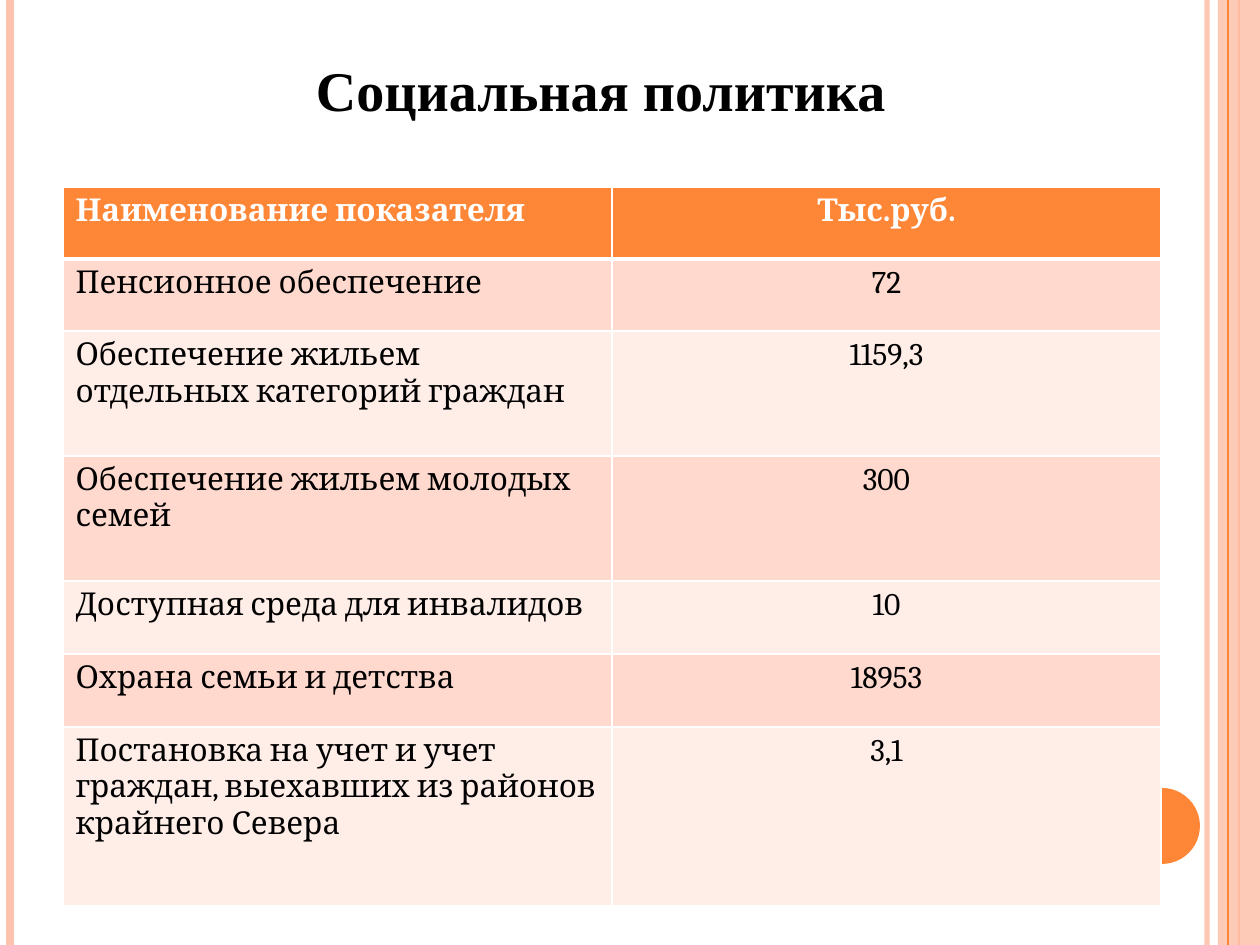
"""Build the social policy spending slide with its side stripes and table."""
from lxml.etree import SubElement
from pptx import Presentation
from pptx.dml.color import RGBColor
from pptx.enum.shapes import MSO_CONNECTOR, MSO_SHAPE
from pptx.enum.text import MSO_ANCHOR, PP_ALIGN
from pptx.oxml.ns import qn
from pptx.util import Emu, Pt

SCALE = 914400 / 126
WIDTH, HEIGHT = 1260, 945
ORANGE, PEACH, WHITE, BLACK = "FE8637", "FEC3AE", "FFFFFF", "000000"
BAND_COLORS = ["FFEDE8", "FFD9CE"]


def px(length):
    return Emu(round(length * SCALE))


def color(value):
    return RGBColor.from_string(value)


deck = Presentation()
deck.slide_width, deck.slide_height = px(WIDTH), px(HEIGHT)
page = deck.slides.add_slide(deck.slide_layouts[5])

stripes = [(1207, PEACH, 3, 93), (10, PEACH, 4.5, 100), (1239, ORANGE, 1.5, 100),
           (1228, ORANGE, 0.75, 100)]
for left, shade, weight, opacity in stripes:
    if left == 1228:
        band = page.shapes.add_shape(MSO_SHAPE.RECTANGLE, px(1218), 0, px(42), px(HEIGHT))
        band.shadow.inherit = False
        band.fill.solid()
        band.fill.fore_color.rgb = color(PEACH)
        band.line.fill.background()
        band_fill = band.fill._xPr.find(qn("a:solidFill"))[0]
        SubElement(band_fill, qn("a:alpha"), val="87000")
    stripe = page.shapes.add_connector(MSO_CONNECTOR.STRAIGHT, px(left), 0, px(left), px(HEIGHT))
    stripe.line.color.rgb = color(shade)
    stripe.line.width = Pt(weight)
    if opacity < 100:
        stripe_fill = stripe.line.fill._xPr.find(qn("a:solidFill"))[0]
        SubElement(stripe_fill, qn("a:alpha"), val=str(opacity * 1000))
    SubElement(stripe._element.spPr, qn("a:effectLst"))

circle = page.shapes.add_shape(MSO_SHAPE.OVAL, px(1124), px(788), px(76), px(76))
circle.shadow.inherit = False
circle.fill.solid()
circle.fill.fore_color.rgb = color(ORANGE)
circle.line.fill.background()

rows = [
    ("Наименование показателя", "Тыс.руб.", 72),
    ("Пенсионное обеспечение", "72", 72),
    ("Обеспечение жильем отдельных категорий граждан", "1159,3", 125),
    ("Обеспечение жильем молодых семей", "300", 125),
    ("Доступная среда для инвалидов", "10", 73),
    ("Охрана семьи и детства", "18953", 73),
    ("Постановка на учет и учет граждан, выехавших из районов крайнего Севера", "3,1", 179),
]
total_height = sum(row[2] for row in rows)
frame = page.shapes.add_table(len(rows), 2, px(63), px(187), px(1098), px(total_height))
table = frame.table
for column in table.columns:
    column.width = px(549)

for row_index, (label, amount, height) in enumerate(rows):
    table.rows[row_index].height = px(height)
    header = row_index == 0
    for column_index, text in enumerate((label, amount)):
        cell = table.cell(row_index, column_index)
        para = cell.text_frame.paragraphs[0]
        para.alignment = PP_ALIGN.CENTER if column_index else PP_ALIGN.LEFT
        span = para.add_run()
        span.text = text
        span.font.name = "Cambria"
        span.font.size = Pt(18)
        span.font.bold = header
        span.font.color.rgb = color(WHITE if header else BLACK)
        properties = cell._tc.get_or_add_tcPr()
        for side in ("lnL", "lnR", "lnT", "lnB"):
            thick = (header and side == "lnB") or (row_index == 1 and side == "lnT")
            border = SubElement(properties, qn(f"a:{side}"), w=str(Pt(3 if thick else 1)))
            border_fill = SubElement(border, qn("a:solidFill"))
            SubElement(border_fill, qn("a:srgbClr"), val=WHITE)
        cell.fill.solid()
        cell.fill.fore_color.rgb = color(ORANGE if header else BAND_COLORS[row_index % 2])

title = page.shapes.title
title.left, title.top, title.width, title.height = px(286), px(49), px(630), px(81)
title.text_frame.word_wrap = True
title.text_frame.vertical_anchor = MSO_ANCHOR.TOP
para = title.text_frame.paragraphs[0]
para.alignment = PP_ALIGN.CENTER
span = para.add_run()
span.text = "Социальная политика"
span.font.name = "Times New Roman"
span.font.size = Pt(32)
span.font.bold = True
span.font.color.rgb = color(BLACK)

deck.save("out.pptx")
